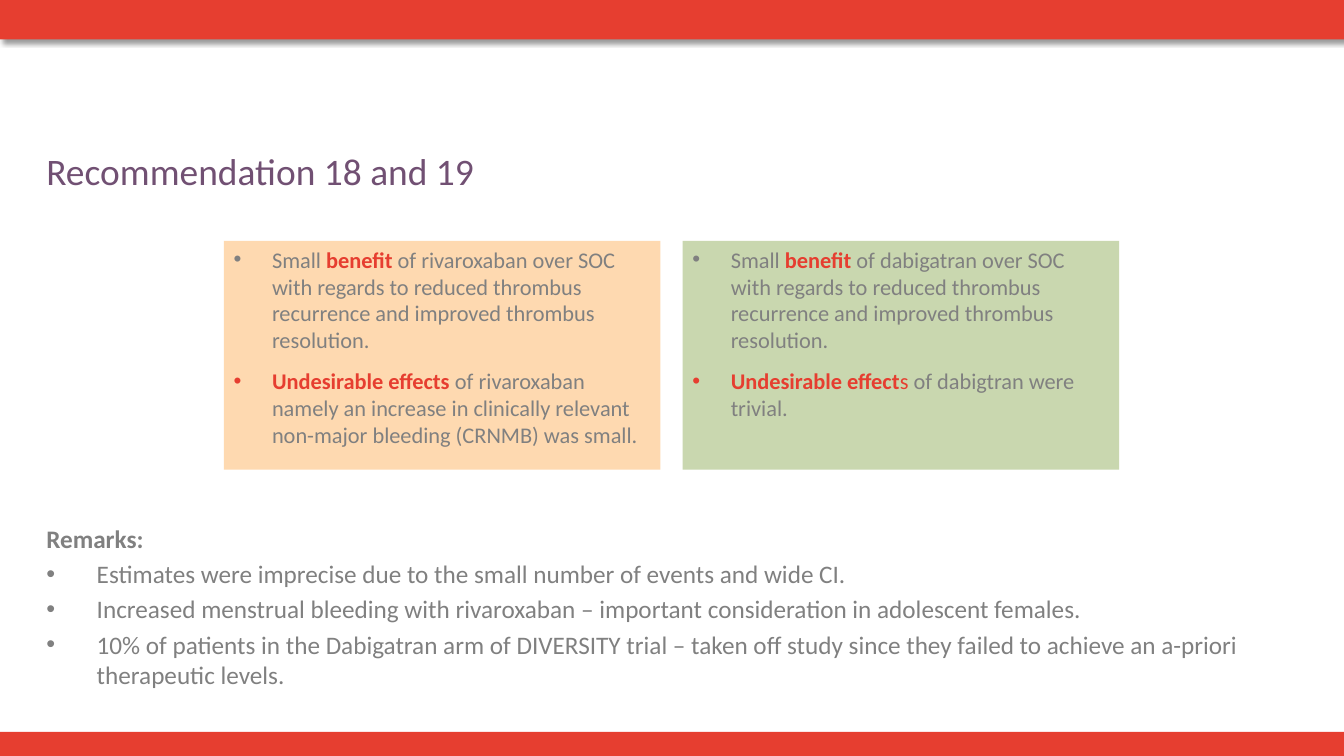
"""Build the slide on recommendations 18 and 19."""
from lxml import etree
from pptx import Presentation
from pptx import util as u
from pptx.dml.color import RGBColor
from pptx.enum import shapes, text
from pptx.oxml.ns import qn

RED, GREY, PLUM = "E63E30", "808080", "715073"
FONT = "Calibri"
TITLE = "Recommendation 18 and 19"
BARS = [(7.26, 0.24, False), (0, 0.39, True)]
GAIN = " over SOC with regards to reduced thrombus recurrence and improved thrombus resolution."
CARDS = [
    ("FED9B0", [
        [("Small ", GREY, False), ("benefit", RED, True), (" of rivaroxaban" + GAIN, GREY, False)],
        [("Undesirable effects ", RED, True),
         ("of rivaroxaban namely an increase in clinically relevant "
          "non-major bleeding (CRNMB) was small.", GREY, False)],
    ]),
    ("C9D7AF", [
        [("Small ", GREY, False), ("benefit", RED, True), (" of dabigatran" + GAIN, GREY, False)],
        [("Undesirable effect", RED, True), ("s ", RED, False),
         ("of dabigtran were trivial.", GREY, False)],
    ]),
]
HEAD = "Remarks:"
NOTES = [
    "Estimates were imprecise due to the small number of events and wide CI.",
    "Increased menstrual bleeding with rivaroxaban – important consideration in adolescent females.",
    "10% of patients in the Dabigatran arm of DIVERSITY trial – taken off study since they failed "
    "to achieve an a-priori therapeutic levels.",
]
WIDE, LEFT, TOP, STEP = 13.33, 2.22, 2.39, 4.55
CARD = (4.33, 2.27)


def tint(hue):
    return RGBColor.from_string(hue)


def rect(page, box, hue):
    form = page.shapes.add_shape(shapes.MSO_SHAPE.RECTANGLE, *map(u.Inches, box))
    form.shadow.inherit = False
    form.fill.solid()
    form.fill.fore_color.rgb = tint(hue)
    form.line.fill.background()
    return form


def shade(form):
    glow = form._element.spPr.find(qn("a:effectLst"))
    drop = etree.SubElement(glow, qn("a:outerShdw"), blurRad=str(u.Pt(4)), dist=str(u.Pt(3)),
                            dir=str(45 * 60000), algn="tl", rotWithShape="0")
    ink = etree.SubElement(drop, qn("a:srgbClr"), val="000000")
    etree.SubElement(ink, qn("a:alpha"), val="40000")


def write(form, lines, size, dent, gaps, **edge):
    frame = form.text_frame
    look = dict(word_wrap=True, vertical_anchor=text.MSO_ANCHOR.TOP, **edge)
    for key, val in look.items():
        setattr(frame, key, val)
    for at, (dot, runs) in enumerate(lines):
        para = frame.paragraphs[0] if at == 0 else frame.add_paragraph()
        para.alignment = text.PP_ALIGN.LEFT
        for key, val in gaps.items():
            if at or key != "space_before":
                setattr(para, key, u.Pt(val))
        if dot:
            prop = para._p.get_or_add_pPr()
            prop.set("marL", str(u.Inches(dent)))
            prop.set("indent", str(-u.Inches(dent)))
            etree.SubElement(prop, qn("a:buFont"), typeface="Arial")
            etree.SubElement(prop, qn("a:buChar"), char="•")
        for words, hue, bold in runs:
            run = para.add_run()
            run.text = words
            for key, val in dict(name=FONT, size=u.Pt(size), bold=bold).items():
                setattr(run.font, key, val)
            run.font.color.rgb = tint(hue)


def main():
    deck = Presentation()
    deck.slide_width, deck.slide_height = u.Inches(WIDE), u.Inches(7.5)
    page = deck.slides.add_slide(deck.slide_layouts[6])
    flat = dict.fromkeys(("margin_left", "margin_top", "margin_right", "margin_bottom"), 0)

    for top, high, dark in BARS:
        bar = rect(page, (0, top, WIDE, high), RED)
        if dark:
            shade(bar)

    title = page.shapes.add_textbox(*map(u.Inches, (0.46, 1.47, 12, 0.78)))
    write(title, [(False, [(TITLE, PLUM, False)])], 26.7, 0, {}, **flat)

    body = page.shapes.add_textbox(*map(u.Inches, (0.46, 5.19, 12.77, 1.84)))
    lines = [(False, [(HEAD, GREY, True)])] + [(True, [(note, GREY, False)]) for note in NOTES]
    write(body, lines, 18, 0.5, {"space_before": 3.6}, **flat)

    for col, (hue, points) in enumerate(CARDS):
        card = rect(page, (LEFT + col * STEP, TOP, *CARD), hue)
        write(card, [(True, runs) for runs in points], 16, 0.38, {"space_after": 10})

    deck.save("out.pptx")


if __name__ == "__main__":
    main()
